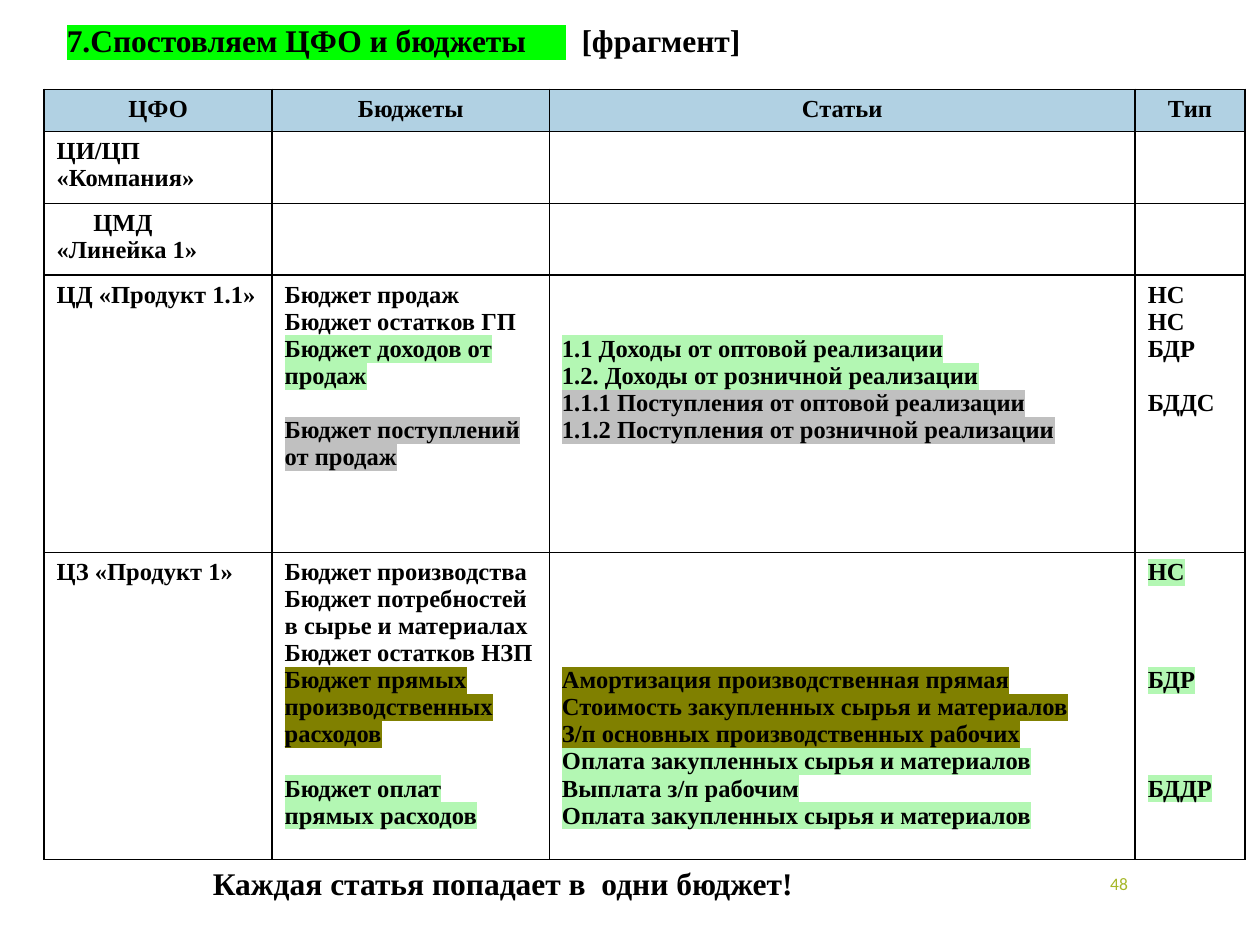
import pptx
import pptx.util
import pptx.dml.color
import pptx.enum.text
import pptx.oxml
import pptx.oxml.ns
from pptx.util import Inches

GREEN, GREY, OLIVE = "B3F7B3", "C0C0C0", "808000"
BLACK, HEADER_FILL, LIME, ACCENT = "000000", "B1D1E3", "00FF00", "A6B727"
SERIF = "Times New Roman"
LINE = 0.215
LEFT = pptx.enum.text.PP_ALIGN.LEFT
CENTER = pptx.enum.text.PP_ALIGN.CENTER
RIGHT = pptx.enum.text.PP_ALIGN.RIGHT

TITLE = [("7.Спостовляем ЦФО и бюджеты     ", LIME), ("  [фрагмент]", None)]
CONCLUSION = "Каждая статья попадает в  одни бюджет!"
PAGE_NUMBER = "48"

COLUMN_WIDTHS = [1.81, 2.2, 4.65, 0.87]
ROW_HEIGHTS = [0.33, 0.57, 0.57, 2.2, 2.44]
HEADERS = ["ЦФО", "Бюджеты", "Статьи", "Тип"]
# Each entry: text, highlight, lines left free above, first-line indent
CENTERS = [
    [[("ЦИ/ЦП «Компания»", None, 0, 0)], [], [], []],
    [[("ЦМД «Линейка 1»", None, 0, 0.29)], [], [], []],
    [
        [("ЦД «Продукт 1.1»", None, 0, 0)],
        [
            ("Бюджет продаж", None, 0, 0),
            ("Бюджет остатков ГП", None, 0, 0),
            ("Бюджет доходов от продаж", GREEN, 0, 0),
            ("Бюджет поступлений от продаж", GREY, 1, 0),
        ],
        [
            ("1.1 Доходы от оптовой реализации", GREEN, 2, 0),
            ("1.2. Доходы от розничной реализации", GREEN, 0, 0),
            ("1.1.1 Поступления от оптовой реализации", GREY, 0, 0),
            ("1.1.2 Поступления от розничной реализации", GREY, 0, 0),
        ],
        [
            ("НС", None, 0, 0),
            ("НС", None, 0, 0),
            ("БДР", None, 0, 0),
            ("БДДС", None, 1, 0),
        ],
    ],
    [
        [("ЦЗ «Продукт 1»", None, 0, 0)],
        [
            ("Бюджет производства", None, 0, 0),
            ("Бюджет потребностей в сырье и материалах", None, 0, 0),
            ("Бюджет остатков НЗП", None, 0, 0),
            ("Бюджет прямых производственных расходов", OLIVE, 0, 0),
            ("Бюджет оплат прямых расходов", GREEN, 1, 0),
        ],
        [
            ("Амортизация производственная прямая", OLIVE, 4, 0),
            ("Стоимость закупленных сырья и материалов", OLIVE, 0, 0),
            ("З/п основных производственных рабочих", OLIVE, 0, 0),
            ("Оплата закупленных сырья и материалов", GREEN, 0, 0),
            ("Выплата з/п рабочим", GREEN, 0, 0),
            ("Оплата закупленных сырья и материалов", GREEN, 0, 0),
        ],
        [("НС", GREEN, 0, 0), ("БДР", GREEN, 3, 0), ("БДДР", GREEN, 3, 0)],
    ],
]


def rgb(value):
    return pptx.dml.color.RGBColor.from_string(value)


def xml(body):
    return pptx.oxml.parse_xml(body.replace(">", f" {pptx.oxml.ns.nsdecls('a')}>", 1))


def format_run(run, size, color=BLACK, font=SERIF, bold=True, highlight=None):
    run.font.size = pptx.util.Pt(size)
    run.font.name = font
    run.font.bold = bold
    run.font.color.rgb = rgb(color)
    if highlight:
        fill = run.font._element.find(pptx.oxml.ns.qn("a:solidFill"))
        fill.addnext(xml(f'<a:highlight><a:srgbClr val="{highlight}"/></a:highlight>'))


def place(shape, left, top, width, height):
    shape.left, shape.top = Inches(left), Inches(top)
    shape.width, shape.height = Inches(width), Inches(height)


def add_text(slide, text, box, size, align=LEFT, wrap=True, **style):
    shape = slide.shapes.add_textbox(*map(Inches, box))
    shape.text_frame.word_wrap = wrap
    shape.text_frame.text = text
    paragraph = shape.text_frame.paragraphs[0]
    paragraph.alignment = align
    format_run(paragraph.runs[0], size, **style)
    return shape


def add_title(slide):
    title = slide.shapes.title
    place(title, 0.43, 0.12, 6.38, 0.4)
    title.text_frame.vertical_anchor = pptx.enum.text.MSO_ANCHOR.TOP
    paragraph = title.text_frame.paragraphs[0]
    paragraph.alignment = LEFT
    paragraph.line_spacing = 1.0
    paragraph.space_before = pptx.util.Pt(0)
    for text, highlight in TITLE:
        run = paragraph.add_run()
        run.text = text
        format_run(run, 18, highlight=highlight)


def add_borders(cell):
    properties = cell._tc.get_or_add_tcPr()
    for position, side in enumerate("LRTB"):
        properties.insert(position, xml(
            f'<a:ln{side} w="12700"><a:solidFill><a:srgbClr val="{BLACK}"/>'
            f'</a:solidFill></a:ln{side}>'))


def fill_cell(cell, entries, align=LEFT):
    cell.text_frame.text = "\n".join(entry[0] for entry in entries)
    for index, (paragraph, entry) in enumerate(zip(cell.text_frame.paragraphs, entries)):
        text, highlight, gap, indent = entry
        paragraph.alignment = align
        if gap and index == 0:
            cell.margin_top = Inches(0.05 + gap * LINE)
        elif gap:
            paragraph.space_before = Inches(gap * LINE)
        if indent:
            paragraph._p.get_or_add_pPr().set("indent", str(Inches(indent)))
        format_run(paragraph.runs[0], 14, highlight=highlight)


def add_budget_table(slide):
    header = [[(name, None, 0, 0)] for name in HEADERS]
    rows = [header] + CENTERS
    table = slide.shapes.add_table(
        len(rows), len(HEADERS), Inches(0.35), Inches(0.71),
        Inches(sum(COLUMN_WIDTHS)), Inches(sum(ROW_HEIGHTS))).table
    for column, width in zip(table.columns, COLUMN_WIDTHS):
        column.width = Inches(width)
    for row, height in zip(table.rows, ROW_HEIGHTS):
        row.height = Inches(height)
    for row_index, row in enumerate(rows):
        for column_index, entries in enumerate(row):
            cell = table.cell(row_index, column_index)
            if row_index == 0:
                cell.fill.solid()
                cell.fill.fore_color.rgb = rgb(HEADER_FILL)
            else:
                cell.fill.background()
            fill_cell(cell, entries, LEFT if row_index else CENTER)
            add_borders(cell)


def main():
    presentation = pptx.Presentation()
    presentation.slide_width, presentation.slide_height = Inches(10), Inches(7.5)
    slide = presentation.slides.add_slide(presentation.slide_layouts[5])
    number = add_text(slide, PAGE_NUMBER, (7.65, 6.81, 1.4, 0.4), 10, RIGHT,
                      color=ACCENT, font="Calibri", bold=False)
    number.text_frame.vertical_anchor = pptx.enum.text.MSO_ANCHOR.MIDDLE
    add_title(slide)
    add_text(slide, CONCLUSION, (1.59, 6.81, 4.85, 0.71), 18, wrap=False)
    add_budget_table(slide)
    presentation.save("out.pptx")


if __name__ == "__main__":
    main()
